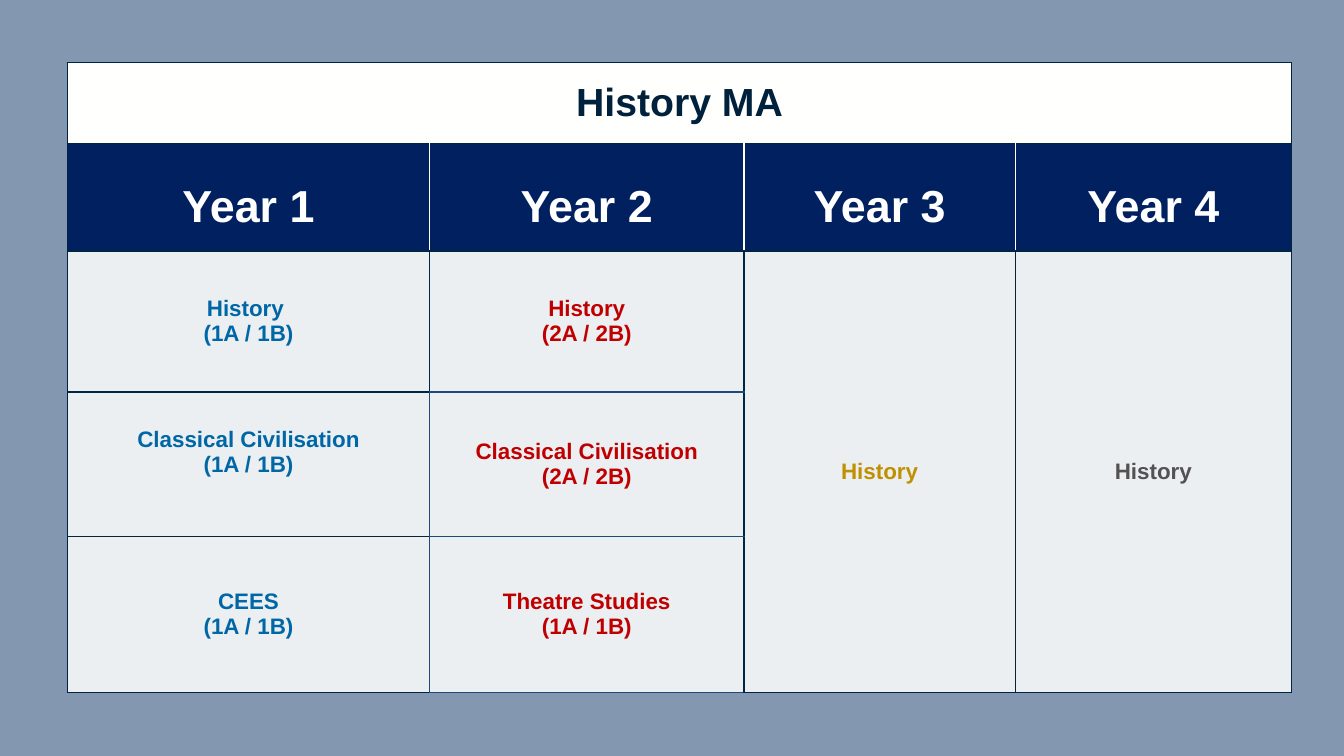
from dataclasses import dataclass
from lxml.etree import SubElement as Sub
from pptx import Presentation
from pptx.dml.color import RGBColor as Rgb
from pptx.enum.text import MSO_ANCHOR as Anchor, PP_ALIGN as Align
from pptx.oxml.ns import qn
from pptx.util import Inches, Pt

TITLE = "History MA"
YEARS = ["Year 1", "Year 2", "Year 3", "Year 4"]
# Courses by year, top to bottom; a lone course fills its whole column.
COURSES = [
    [["History ", "(1A / 1B)"], ["Classical Civilisation", "(1A / 1B)"], ["CEES", "(1A / 1B)"]],
    [["History", "(2A / 2B)"], ["Classical Civilisation", "(2A / 2B)"], ["Theatre Studies", "(1A / 1B)"]],
    [["History"]],
    [["History"]],
]
COLS = [3.59, 3.12, 2.69, 2.74]
ROWS = [0.8, 1.07, 1.4, 1.43, 1.55]
LEFT, TOP = 0.67, 0.62
HEAD, BODY = 1, 2
RAISED = (3, 0)


@dataclass(frozen=True)
class Theme:
    font: str = "Arial"
    back: str = "8497B0"
    white: str = "FFFFFE"
    navy: str = "002060"
    edge: str = "002542"
    blue: str = "1F497D"
    title: str = "00213B"
    head: str = "FFFFFF"
    years: tuple = ("0067A7", "C00000", "BF9000", "525252")
    big: int = 28
    mid: int = 32
    small: int = 16
    alpha: int = 85


LOOK = Theme()


def edges(row, col):
    """Colours of the left, right, top and bottom borders of a cell."""
    left = right = top = low = LOOK.edge
    if row == HEAD:
        left = LOOK.white if col > 0 else left
        right = LOOK.white if col < len(COLS) - 1 else right
    elif row >= BODY and col == 1:
        low = LOOK.blue
        if row > BODY:
            left = top = LOOK.blue
    elif row > BODY and col == 0:
        right = LOOK.blue
    return {"L": left, "R": right, "T": top, "B": low}


def border(cell, row, col):
    props = cell._tc.get_or_add_tcPr()
    for side, color in edges(row, col).items():
        line = Sub(props, qn("a:ln" + side), w=str(Pt(1)))
        Sub(Sub(line, qn("a:solidFill")), qn("a:srgbClr"), val=color)


def paint(cell, color, alpha=100):
    cell.fill.solid()
    cell.fill.fore_color.rgb = Rgb.from_string(color)
    if alpha < 100:
        tint = cell._tc.tcPr.find(qn("a:solidFill")).find(qn("a:srgbClr"))
        Sub(tint, qn("a:alpha"), val=str(alpha * 1000))


def write(cell, lines, size, color, space=1.0):
    frame = cell.text_frame
    for i, line in enumerate(lines):
        para = frame.add_paragraph() if i else frame.paragraphs[0]
        para.alignment = Align.CENTER
        para.line_spacing = space
        run = para.add_run()
        run.text = line
        font = run.font
        font.name, font.size, font.bold = LOOK.font, Pt(size), True
        font.color.rgb = Rgb.from_string(color)


def build(slide):
    frame = slide.shapes.add_table(
        len(ROWS), len(COLS), Inches(LEFT), Inches(TOP), Inches(sum(COLS)), Inches(sum(ROWS)))
    table = frame.table
    table.first_row = table.horz_banding = False
    for col, wide in zip(table.columns, COLS):
        col.width = Inches(wide)
    for row, tall in zip(table.rows, ROWS):
        row.height = Inches(tall)

    for r in range(len(ROWS)):
        for c in range(len(COLS)):
            cell = table.cell(r, c)
            cell.vertical_anchor = Anchor.MIDDLE
            cell.margin_left = cell.margin_right = Inches(0.12)
            cell.margin_top = cell.margin_bottom = Inches(0.06)
            border(cell, r, c)
            if r >= BODY:
                paint(cell, LOOK.white, LOOK.alpha)
            else:
                paint(cell, LOOK.navy if r == HEAD else LOOK.white)
    table.cell(*RAISED).margin_bottom = Inches(0.3)

    table.cell(0, 0).merge(table.cell(0, len(COLS) - 1))
    write(table.cell(0, 0), [TITLE], LOOK.big, LOOK.title)
    for c, (year, courses) in enumerate(zip(YEARS, COURSES)):
        write(table.cell(HEAD, c), [year], LOOK.mid, LOOK.head, 1.4)
        if len(courses) == 1:
            table.cell(BODY, c).merge(table.cell(len(ROWS) - 1, c))
        for r, lines in enumerate(courses, BODY):
            write(table.cell(r, c), lines, LOOK.small, LOOK.years[c])


def main():
    deck = Presentation()
    deck.slide_width, deck.slide_height = Inches(13.33), Inches(7.5)
    slide = deck.slides.add_slide(deck.slide_layouts[6])
    fill = slide.background.fill
    fill.solid()
    fill.fore_color.rgb = Rgb.from_string(LOOK.back)
    build(slide)
    deck.save("out.pptx")


if __name__ == "__main__":
    main()
